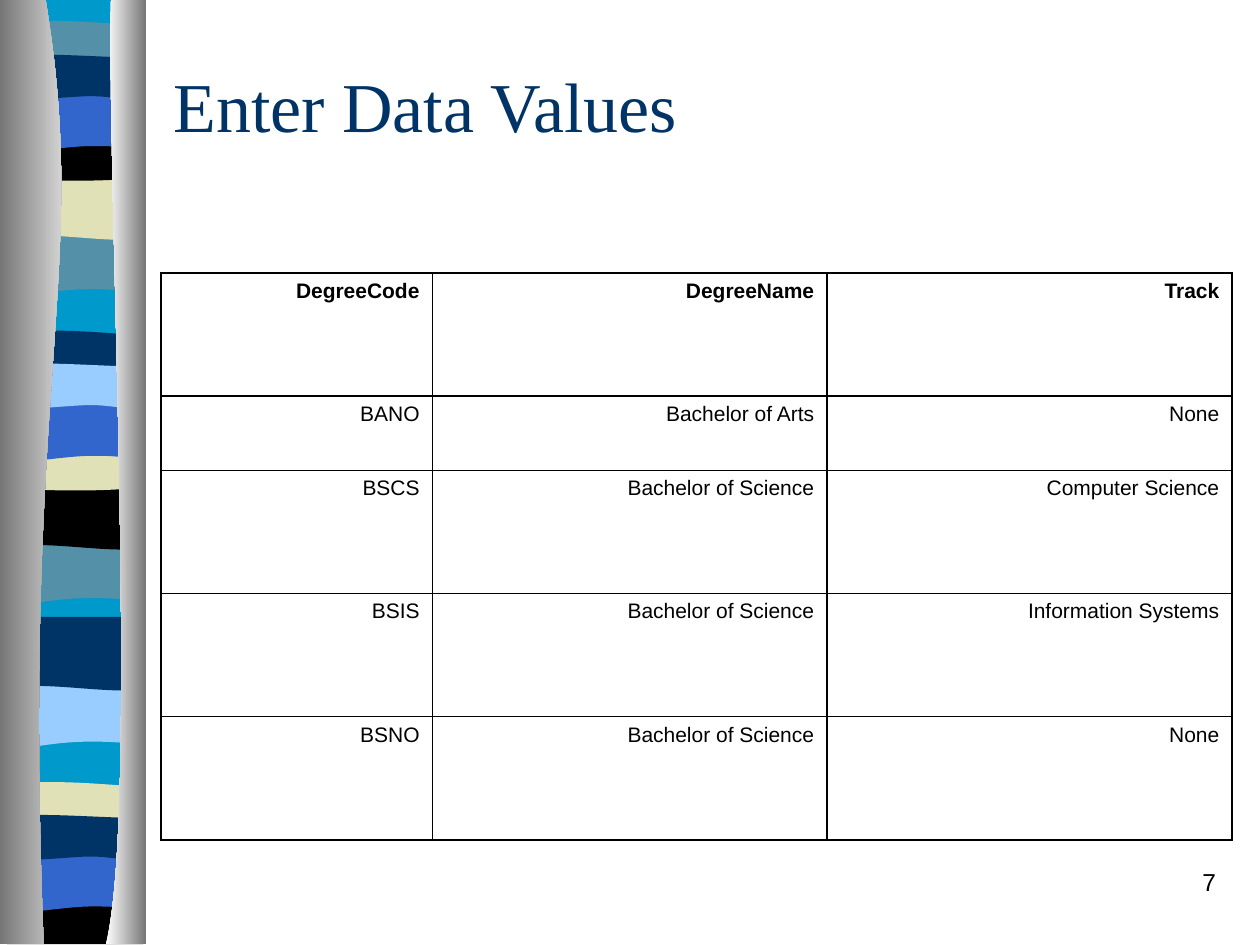
"""Build a data entry slide with a table beside a striped ribbon."""
from typing import NamedTuple

from lxml import etree
from pptx import Presentation
from pptx.dml.color import RGBColor
from pptx.enum.text import MSO_ANCHOR, PP_ALIGN
from pptx.oxml.ns import qn
from pptx.util import Pt

LEFT, RIGHT = PP_ALIGN.LEFT, PP_ALIGN.RIGHT
MIDDLE = MSO_ANCHOR.MIDDLE

BLACK, NAVY, BLUE, SKY = "000000", "003366", "3366CC", "99CCFF"
CYAN, STEEL, SAND = "0099CC", "5490A8", "E1E1B7"
GRAY, WHITE = "767676", "FFFFFF"

Point = tuple[float, float]
FLAT = [(4, 0), (82, 0)]
WAVE = [(4, 0), (17, 6), (28, -6), (82, 0)]
RIPPLE = [(4, 0), (28, -4), (69, 5), (82, 0)]
SAG = [(4, 0), (17, 3), (69, 3), (82, 0)]
HUMP = [(4, 0), (9, -4), (21, -3), (34, -3), (47, -3), (72, -1), (82, 0)]
DIP = [(4, 0), (52, 4), (66, 0), (82, 0)]
ARCH = [(4, 0), (16, 0), (39, -4), (52, -4), (65, -4), (70, -4), (82, 0)]
CREST = [(4, 0), (15, -4), (57, 0), (82, 0)]
ROLL = [(4, 0), (12, 4), (39, 0), (52, 0), (65, 0), (77, 4), (82, 0)]


class Band(NamedTuple):
    """A stripe between two curved edges."""
    color: str
    top: float
    base: float
    upper: list[Point]
    lower: list[Point]


BANDS = [
    Band(CYAN, -0.5, 538, FLAT, FLAT),
    Band(STEEL, 133, 167, FLAT, WAVE),
    Band(SAND, 101, 135.5, FLAT, RIPPLE),
    Band(STEEL, 15, 32.5, HUMP, SAG),
    Band(BLACK, 78, 101, DIP, SAG),
    Band(BLUE, 53.5, 87.5, FLAT, ARCH),
    Band(NAVY, 33, 55, CREST, ROLL),
    Band(STEEL, 310, 343.5, FLAT, WAVE),
    Band(BLACK, 278.5, 312.5, FLAT, RIPPLE),
    Band(NAVY, 192, 209.5, HUMP, SAG),
    Band(SAND, 254, 278, DIP, SAG),
    Band(BLUE, 230.5, 264.5, FLAT, ARCH),
    Band(SKY, 209.5, 231.5, CREST, ROLL),
    Band(SKY, 391, 425.5, FLAT, WAVE),
    Band(NAVY, 352.5, 393, FLAT, RIPPLE),
    Band(SAND, 450, 467.5, HUMP, SAG),
    Band(BLACK, 512.5, 539.5, DIP, FLAT),
    Band(BLUE, 488, 522, FLAT, ARCH),
    Band(NAVY, 467.5, 489.5, CREST, ROLL),
]

ROWS = [
    ("DegreeCode", "DegreeName", "Track"),
    ("BANO", "Bachelor of Arts", "None"),
    ("BSCS", "Bachelor of Science", "Computer Science"),
    ("BSIS", "Bachelor of Science", "Information Systems"),
    ("BSNO", "Bachelor of Science", "None"),
]
WIDTHS = [155, 225.5, 231.5]
HEIGHTS = [70.4, 42.4, 70.4, 70.4, 70.4]


def rgb(color: str) -> RGBColor:
    """Turn a hex string into a colour."""
    return RGBColor.from_string(color)


def bend(lines: list) -> None:
    """Turn each three line segments into one cubic curve."""
    for i in range(0, len(lines) - 2, 3):
        curve = lines[i]
        curve.tag = qn("a:cubicBezTo")
        for line in lines[i + 1:i + 3]:
            curve.append(line[0])
            line.getparent().remove(line)


def draw(slide, first: list[Point], second: list[Point]):
    """Draw a closed outline from two edges, without line or shadow."""
    spots = [(Pt(x), Pt(y)) for x, y in first + second]
    pen = slide.shapes.build_freeform(*spots[0])
    pen.add_line_segments(spots[1:], close=True)
    shape = pen.convert_to_shape()
    lines = list(shape._element.iter(qn("a:lnTo")))
    bend(lines[:len(first) - 1])
    bend(lines[len(first):len(spots) - 1])
    shape.shadow.inherit = False
    shape.line.fill.background()
    return shape


def add_band(slide, band: Band) -> None:
    """Draw one stripe of the ribbon."""
    upper = [(x, band.top + y) for x, y in band.upper]
    lower = [(x, band.base + y) for x, y in band.lower]
    shape = draw(slide, upper, lower[::-1])
    shape.fill.solid()
    shape.fill.fore_color.rgb = rgb(band.color)


def add_side(slide, curve: list[Point], edge: float, first: str, last: str) -> None:
    """Draw a shaded strip from a curve to a straight edge."""
    shape = draw(slide, curve, [(edge, 539.5), (edge, -0.5)])
    shape.fill.gradient()
    shape.fill.gradient_angle = 0
    for stop, color in zip(shape.fill.gradient_stops, (first, last)):
        stop.color.rgb = rgb(color)


def style(frame, size: float, face: str, color: str, align, bold: bool = False) -> None:
    """Format all text in a frame."""
    for para in frame.paragraphs:
        para.alignment = align
        for run in para.runs:
            font = run.font
            font.size, font.name, font.bold = Pt(size), face, bold
            font.color.rgb = rgb(color)


def add_rules(cell) -> None:
    """Give a cell thin black borders."""
    props = cell._tc.get_or_add_tcPr()
    for side in ("a:lnL", "a:lnR", "a:lnT", "a:lnB"):
        line = etree.SubElement(props, qn(side), w=str(Pt(1)))
        fill = etree.SubElement(line, qn("a:solidFill"))
        etree.SubElement(fill, qn("a:srgbClr"), val=BLACK)


def add_grid(slide) -> None:
    """Add the table of degrees."""
    frame = slide.shapes.add_table(len(ROWS), len(WIDTHS), Pt(92), Pt(156),
                                   Pt(sum(WIDTHS)), Pt(sum(HEIGHTS)))
    table = frame.table
    table.first_row = table.horz_banding = False
    for col, width in zip(table.columns, WIDTHS):
        col.width = Pt(width)
    for r, (row, height) in enumerate(zip(ROWS, HEIGHTS)):
        table.rows[r].height = Pt(height)
        for c, text in enumerate(row):
            cell = table.cell(r, c)
            add_rules(cell)
            cell.fill.background()
            cell.text_frame.text = text
            style(cell.text_frame, 12, "Arial", BLACK, RIGHT, r == 0)


def main() -> None:
    """Build and save the slide."""
    deck = Presentation()
    deck.slide_width, deck.slide_height = Pt(720), Pt(540)
    slide = deck.slides.add_slide(deck.slide_layouts[5])
    for band in BANDS:
        add_band(slide, band)
    add_side(slide, [(26, -0.5), (52, 155.5), (12, 213), (25, 539.5)], 0, GRAY, WHITE)
    add_side(slide, [(63.5, -0.5), (60.5, 90), (80, 465), (60.5, 539.5)], 83.5, WHITE, GRAY)

    title = slide.shapes.title
    title.left, title.top, title.width, title.height = Pt(92), Pt(36), Pt(612), Pt(48)
    title.text_frame.text = "Enter Data Values"
    title.text_frame.vertical_anchor = MIDDLE
    style(title.text_frame, 40, "Times New Roman", NAVY, LEFT)

    add_grid(slide)
    page = slide.shapes.add_textbox(Pt(552), Pt(492), Pt(150), Pt(36)).text_frame
    page.word_wrap = True
    page.text = "7"
    style(page, 14, "Arial", BLACK, RIGHT)
    deck.save("out.pptx")


if __name__ == "__main__":
    main()
